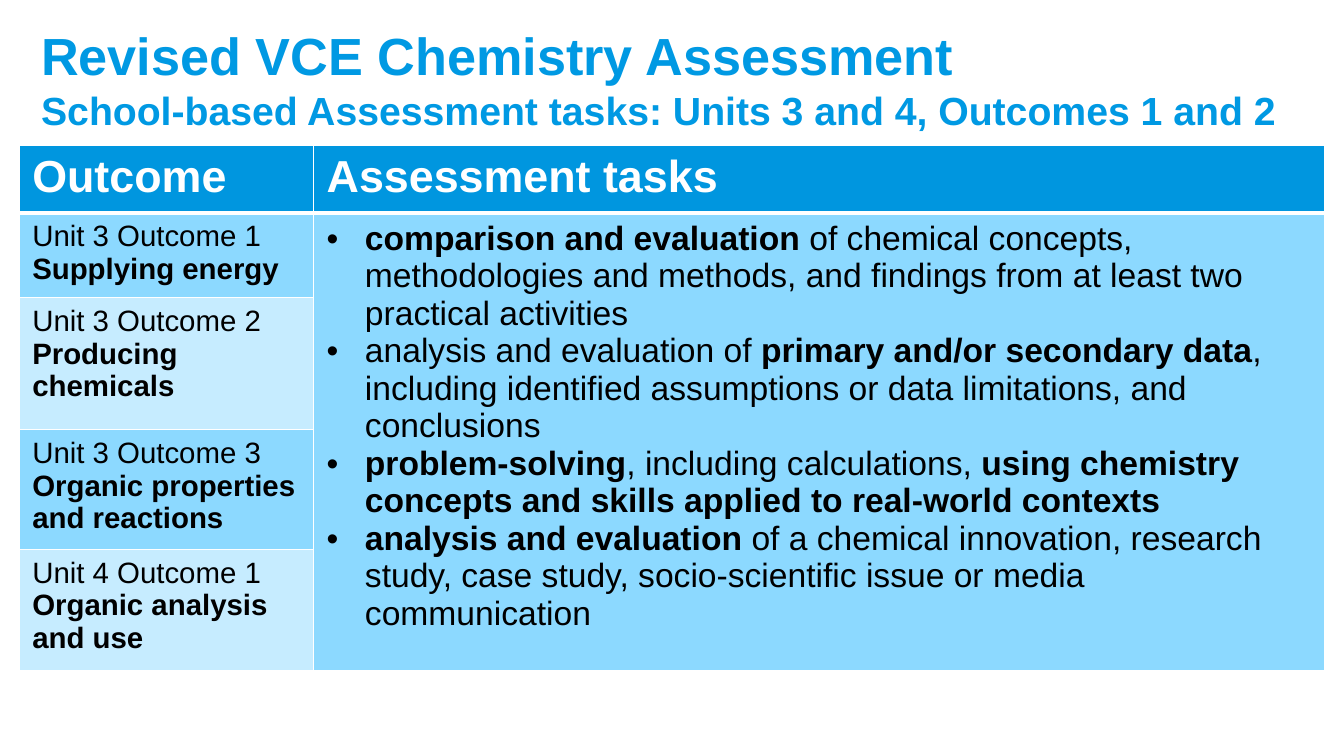
from dataclasses import dataclass

from lxml import etree
from pptx import Presentation
from pptx.dml.color import RGBColor
from pptx.enum.text import MSO_ANCHOR
from pptx.oxml.ns import qn
from pptx.util import Inches, Pt

MIDDLE = MSO_ANCHOR.MIDDLE
BLANK_LAYOUT = 6


@dataclass(frozen=True)
class Theme:
    font: str = "Arial"
    title: str = "0099E3"
    header: str = "0096DF"
    dark_band: str = "8CD9FF"
    light_band: str = "C6ECFF"
    white: str = "FFFFFF"
    black: str = "000000"
    title_size: float = 37.3
    subtitle_size: float = 28
    header_size: float = 32
    outcome_size: float = 21
    task_size: float = 24


OUTCOMES = [
    ("Unit 3 Outcome 1", "Supplying energy"),
    ("Unit 3 Outcome 2", "Producing chemicals"),
    ("Unit 3 Outcome 3", "Organic properties and reactions"),
    ("Unit 4 Outcome 1", "Organic analysis and use"),
]

# Each task is a list of (words, bold) spans.
TASKS = [
    [("comparison and evaluation ", True),
     ("of chemical concepts, methodologies and methods, and findings "
      "from at least two practical activities", False)],
    [("analysis and evaluation of ", False),
     ("primary and/or secondary data", True),
     (", including identified assumptions or data limitations, and conclusions", False)],
    [("problem-solving", True),
     (", including calculations, ", False),
     ("using chemistry concepts and skills applied to real-world contexts", True)],
    [("analysis and evaluation ", True),
     ("of a chemical innovation, research study, case study, "
      "socio-scientific issue or media communication", False)],
]

COLUMN_WIDTHS = [2.92, 10.03]
ROW_HEIGHTS = [0.67, 0.84, 1.31, 1.11, 1.11]


class SlideBuilder:
    def __init__(self, page, theme):
        self.page = page
        self.theme = theme

    def add_span(self, para, words, size, color, bold):
        span = para.add_run()
        span.text = words
        span.font.name = self.theme.font
        span.font.size = Pt(size)
        span.font.bold = bold
        span.font.color.rgb = RGBColor.from_string(color)

    def add_title(self, title, subtitle, left, top, width, height):
        box = self.page.shapes.add_textbox(
            Inches(left), Inches(top), Inches(width), Inches(height))
        frame = box.text_frame
        frame.word_wrap = True
        frame.vertical_anchor = MIDDLE
        para = frame.paragraphs[0]
        self.add_span(para, title, self.theme.title_size, self.theme.title, True)
        para.add_line_break()
        self.add_span(para, subtitle, self.theme.subtitle_size, self.theme.title, True)

    def add_table(self, left, top, column_widths, row_heights):
        table = self.page.shapes.add_table(
            len(row_heights), len(column_widths), Inches(left), Inches(top),
            Inches(sum(column_widths)), Inches(sum(row_heights))).table
        for column, width in zip(table.columns, column_widths):
            column.width = Inches(width)
        for row, height in zip(table.rows, row_heights):
            row.height = Inches(height)
        return table

    def style_cell(self, cell, fill, top_line=1, bottom_line=1):
        cell.margin_left = cell.margin_right = Inches(0.13)
        cell.margin_top = cell.margin_bottom = Inches(0.07)
        properties = cell._tc.get_or_add_tcPr()
        for side, points in (("L", 1), ("R", 1), ("T", top_line), ("B", bottom_line)):
            line = etree.SubElement(properties, qn(f"a:ln{side}"), w=str(Pt(points)))
            solid = etree.SubElement(line, qn("a:solidFill"))
            etree.SubElement(solid, qn("a:srgbClr"), val=self.theme.white)
        cell.fill.solid()
        cell.fill.fore_color.rgb = RGBColor.from_string(fill)

    def fill_cell(self, cell, paragraphs, size, color, bulleted=False):
        """Write paragraphs, each a list of (words, bold) spans."""
        frame = cell.text_frame
        for index, spans in enumerate(paragraphs):
            para = frame.add_paragraph() if index else frame.paragraphs[0]
            if bulleted:
                self.add_bullet(para)
            for words, bold in spans:
                self.add_span(para, words, size, color, bold)

    def add_bullet(self, para):
        properties = para._p.get_or_add_pPr()
        indent = Inches(0.38)
        properties.set("marL", str(indent))
        properties.set("indent", str(-indent))
        etree.SubElement(properties, qn("a:buFont"), typeface=self.theme.font)
        etree.SubElement(properties, qn("a:buChar"), char="•")


def main():
    deck = Presentation()
    deck.slide_width, deck.slide_height = Inches(13.33), Inches(7.5)
    theme = Theme()
    page = deck.slides.add_slide(deck.slide_layouts[BLANK_LAYOUT])
    builder = SlideBuilder(page, theme)

    builder.add_title("Revised VCE Chemistry Assessment",
                      "School-based Assessment tasks: Units 3 and 4, Outcomes 1 and 2",
                      0.31, 0.1, 12.7, 1.36)

    table = builder.add_table(0.19, 1.44, COLUMN_WIDTHS, ROW_HEIGHTS)
    for column, heading in enumerate(["Outcome", "Assessment tasks"]):
        cell = table.cell(0, column)
        builder.style_cell(cell, theme.header, bottom_line=3)
        builder.fill_cell(cell, [[(heading, True)]], theme.header_size, theme.white)

    for row, (outcome, topic) in enumerate(OUTCOMES, start=1):
        top_line = 3 if row == 1 else 1
        band = theme.dark_band if row % 2 else theme.light_band
        cell = table.cell(row, 0)
        builder.style_cell(cell, band, top_line)
        builder.fill_cell(cell, [[(outcome, False)], [(topic, True)]],
                          theme.outcome_size, theme.black)
        builder.style_cell(table.cell(row, 1), theme.dark_band, top_line)

    tasks_cell = table.cell(1, 1)
    tasks_cell.merge(table.cell(len(OUTCOMES), 1))
    builder.fill_cell(tasks_cell, TASKS, theme.task_size, theme.black, bulleted=True)

    deck.save("out.pptx")


if __name__ == "__main__":
    main()
